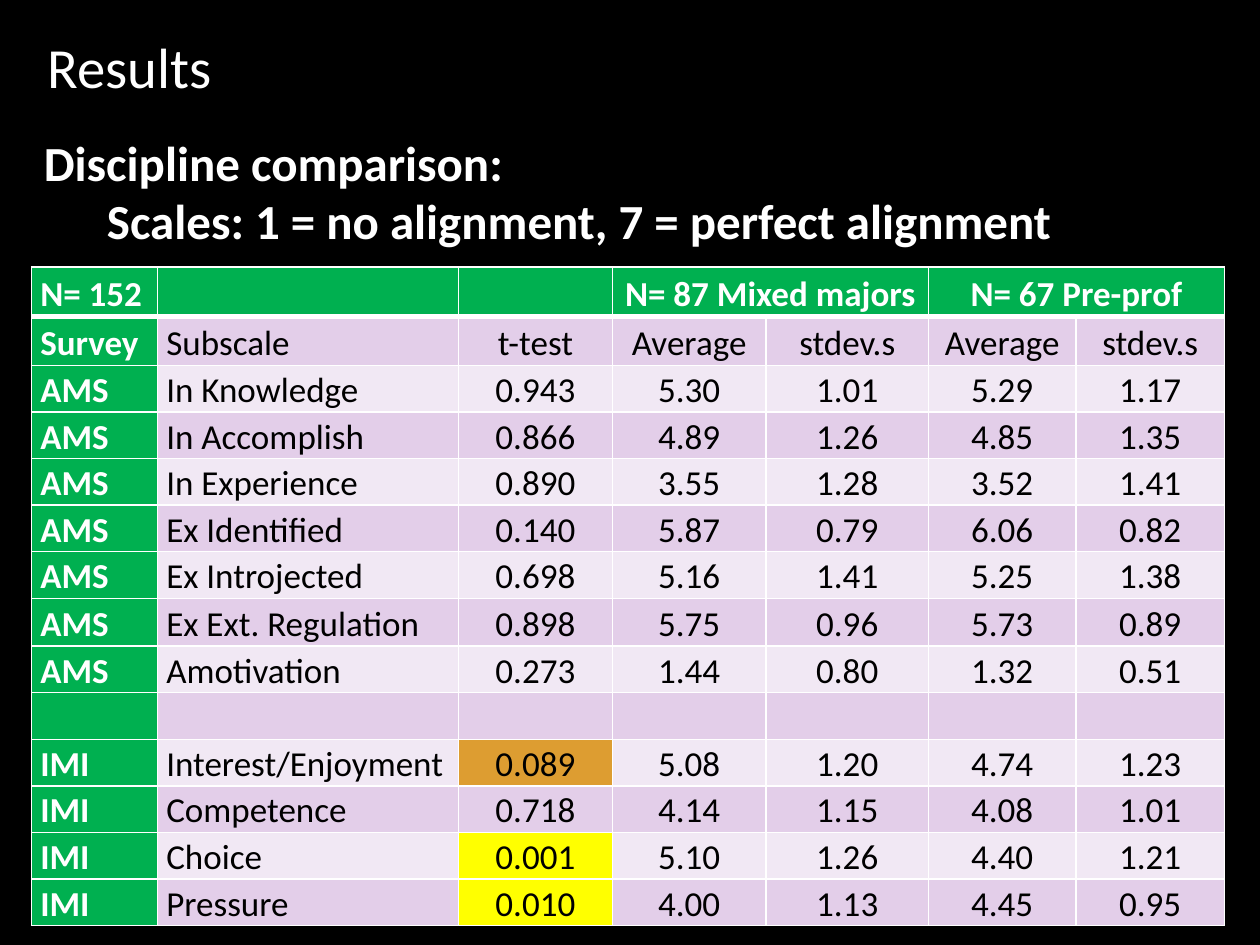
from lxml.etree import SubElement
from pptx import Presentation
from pptx.dml.color import RGBColor
from pptx.enum.text import MSO_ANCHOR, PP_ALIGN
from pptx.oxml.ns import qn
from pptx.util import Inches, Pt

WIDE, HIGH = Inches(10), Inches(7.5)
FACE = "Calibri"
BLACK = RGBColor(0x00, 0x00, 0x00)
WHITE = RGBColor(0xFF, 0xFF, 0xFF)
GREEN = RGBColor(0x00, 0xB0, 0x50)
LILAC = RGBColor(0xE3, 0xCE, 0xE9)
PALE = RGBColor(0xF1, 0xE8, 0xF4)
AMBER = RGBColor(0xDD, 0x9D, 0x31)
YELLOW = RGBColor(0xFF, 0xFF, 0x00)

COLS = [1, 2.39, 1.22, 1.22, 1.29, 1.17, 1.18]
ROWS = [0.39] * 2 + [0.37] * 5 + [0.38] + [0.37] * 6
HEADS = [0, 3, 5]  # first column of each filled heading
DATA = [line.split("|") for line in """\
N= 152|||N= 87 Mixed majors||N= 67 Pre-prof|
Survey|Subscale|t-test|Average|stdev.s|Average|stdev.s
AMS|In Knowledge|0.943|5.30|1.01|5.29|1.17
AMS|In Accomplish|0.866|4.89|1.26|4.85|1.35
AMS|In Experience|0.890|3.55|1.28|3.52|1.41
AMS|Ex Identified|0.140|5.87|0.79|6.06|0.82
AMS|Ex Introjected|0.698|5.16|1.41|5.25|1.38
AMS|Ex Ext. Regulation|0.898|5.75|0.96|5.73|0.89
AMS|Amotivation|0.273|1.44|0.80|1.32|0.51
||||||
IMI|Interest/Enjoyment|0.089|5.08|1.20|4.74|1.23
IMI|Competence|0.718|4.14|1.15|4.08|1.01
IMI|Choice|0.001|5.10|1.26|4.40|1.21
IMI|Pressure|0.010|4.00|1.13|4.45|0.95""".split("\n")]
MARKS = {(10, 2): AMBER, (12, 2): YELLOW, (13, 2): YELLOW}


def share(left, top, width, height):
    """Turn percentages of the slide into a box."""
    return [int(whole * part / 100) for whole, part in
            zip((WIDE, HIGH, WIDE, HIGH), (left, top, width, height))]


def style(para, size, color, bold=False):
    font = para.font
    font.name, font.size, font.bold = FACE, Pt(size), bold
    font.color.rgb = color


def edge(cell, top=1, bottom=1):
    props = cell._tc.get_or_add_tcPr()
    for tag, width in (("lnL", 1), ("lnR", 1), ("lnT", top), ("lnB", bottom)):
        line = SubElement(props, qn(f"a:{tag}"), w=str(Pt(width)))
        fill = SubElement(line, qn("a:solidFill"))
        SubElement(fill, qn("a:srgbClr"), val=str(WHITE))


def add_title(slide, box):
    title = slide.shapes.title
    title.left, title.top, title.width, title.height = box
    frame = title.text_frame
    frame.text = "Results"
    frame.vertical_anchor = MSO_ANCHOR.MIDDLE
    para = frame.paragraphs[0]
    para.alignment = PP_ALIGN.LEFT
    style(para, 32.4, WHITE)


def fill_cell(cell, row, col, text):
    # Borders: a heavy rule parts the heading row from the body
    edge(cell, top=3 if row == 1 else 1, bottom=3 if row == 0 else 1)
    head = row == 0 or col == 0
    band = LILAC if row % 2 else PALE
    cell.fill.solid()
    cell.fill.fore_color.rgb = GREEN if head else MARKS.get((row, col), band)
    cell.vertical_anchor = MSO_ANCHOR.BOTTOM
    cell.margin_left = cell.margin_right = Inches(0.07)
    cell.margin_top = cell.margin_bottom = 0
    if text:
        cell.text = text
    para = cell.text_frame.paragraphs[0]
    para.alignment = PP_ALIGN.CENTER if col > 1 else PP_ALIGN.LEFT
    para.line_spacing = 1.07
    style(para, 20, WHITE if head else BLACK, head)


def add_scores(slide, box):
    table = slide.shapes.add_table(len(ROWS), len(COLS), *box).table
    table.first_row = table.horz_banding = False
    for col, part in zip(table.columns, COLS):
        col.width = int(box[2] * part / sum(COLS))
    for row, part in zip(table.rows, ROWS):
        row.height = int(box[3] * part / sum(ROWS))
    for r, line in enumerate(DATA):
        for c, text in enumerate(line):
            fill_cell(table.cell(r, c), r, c, text)
    for c in HEADS[1:]:
        table.cell(0, c).merge(table.cell(0, c + 1))


def add_intro(slide, box):
    frame = slide.shapes.add_textbox(*box).text_frame
    frame.word_wrap = True
    frame.text = ("Discipline comparison:\n"
                  "Scales: 1 = no alignment, 7 = perfect alignment")
    first, second = frame.paragraphs
    second._p.get_or_add_pPr().set("marL", str(Inches(0.5)))
    for para in (first, second):
        style(para, 28, WHITE, True)


def main():
    deck = Presentation()
    deck.slide_width, deck.slide_height = WIDE, HIGH
    slide = deck.slides.add_slide(deck.slide_layouts[5])
    slide.background.fill.solid()
    slide.background.fill.fore_color.rgb = BLACK
    add_title(slide, share(2.8, 4, 68.7, 6))
    add_scores(slide, share(2.5, 28.27, 94.7, 69.73))
    add_intro(slide, share(2.5, 13.33, 101.1, 82))
    deck.save("out.pptx")


if __name__ == "__main__":
    main()
